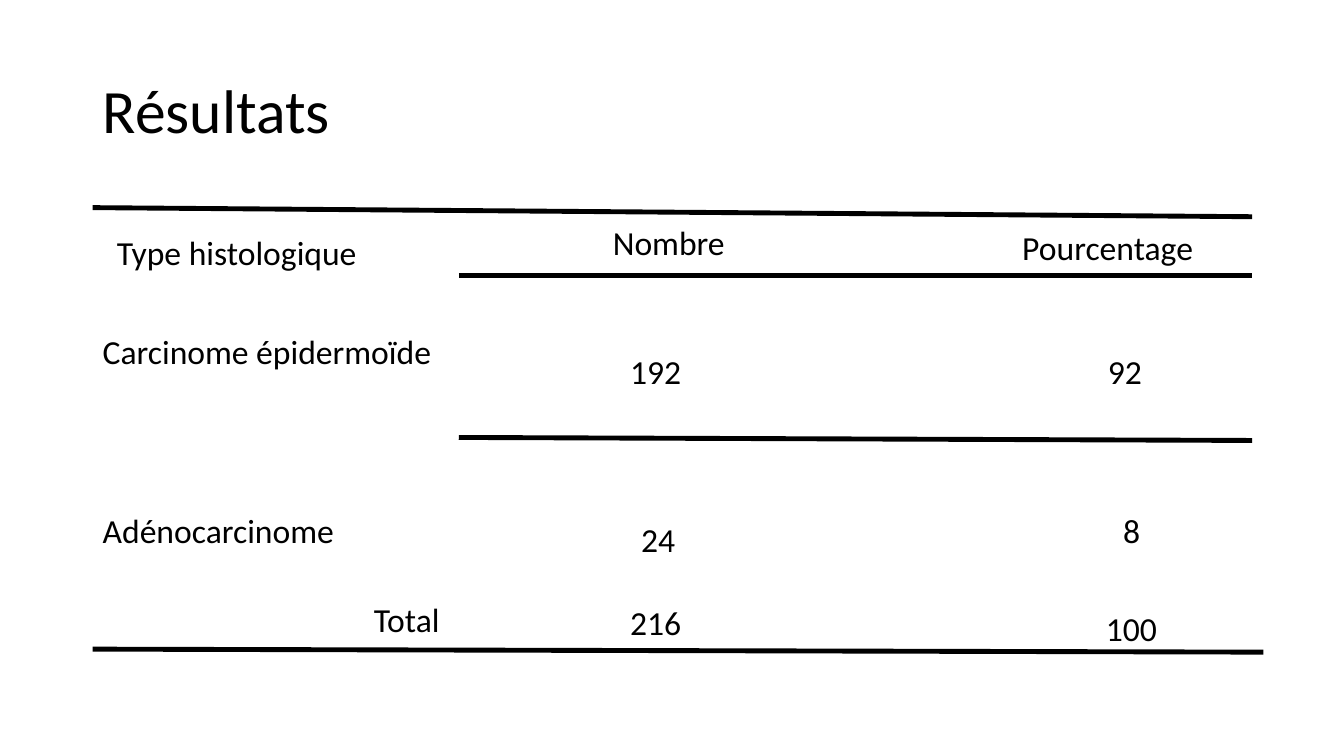
from pptx import Presentation
from pptx.dml.color import RGBColor
from pptx.enum.shapes import MSO_CONNECTOR
from pptx.enum.text import MSO_ANCHOR, MSO_AUTO_SIZE
from pptx.oxml.ns import qn
from pptx.util import Inches, Pt
from lxml.etree import SubElement

# Content
TITLE = "Résultats"
TITLE_BOX = (0.92, 0.4, 11.5, 1.45)
CELLS = [  # text, left, top, width
    ("Type histologique", 1.06, 2.25, 2.68),
    ("Nombre", 5.98, 2.15, 1.4),
    ("Pourcentage", 10.04, 2.2, 1.99),
    ("Carcinome épidermoïde", 0.92, 3.23, 3.57),
    ("192", 6.15, 3.43, 0.71),
    ("92", 10.89, 3.43, 0.54),
    ("Adénocarcinome", 0.92, 5.01, 2.52),
    ("24", 6.26, 5.1, 0.54),
    ("8", 11.04, 5.01, 0.37),
    ("Total", 3.61, 5.89, 0.94),
    ("216", 6.15, 5.92, 0.71),
    ("100", 10.87, 5.98, 0.71),
]
CELL_HEIGHT = 0.5
LEFT, VALUES_LEFT, RIGHT = 0.92, 4.55, 12.42
RULES = [  # x1, y1, x2, y2
    (LEFT, 2.06, RIGHT, 2.15),
    (VALUES_LEFT, 2.73, RIGHT, 2.73),
    (VALUES_LEFT, 4.34, RIGHT, 4.37),
    (LEFT, 6.44, 12.53, 6.47),
]


class Theme:
    font = "Calibri"
    ink = RGBColor(0, 0, 0)
    title = Pt(44)
    body = Pt(24)
    rule = Pt(3.5)


def add_text(slide, text, box, size):
    tf = slide.shapes.add_textbox(*map(Inches, box)).text_frame
    p = tf.paragraphs[0]
    p.text = text
    p.font.name = Theme.font
    p.font.size = size
    p.font.color.rgb = Theme.ink
    return tf


def add_rule(slide, ends):
    line = slide.shapes.add_connector(MSO_CONNECTOR.STRAIGHT, *map(Inches, ends))
    line.line.color.rgb = Theme.ink
    line.line.width = Theme.rule
    SubElement(line._element.spPr, qn("a:effectLst"))


def main():
    prs = Presentation()
    prs.slide_width, prs.slide_height = Inches(13.33), Inches(7.5)
    slide = prs.slides.add_slide(prs.slide_layouts[6])

    # Title
    tf = add_text(slide, TITLE, TITLE_BOX, Theme.title)
    tf.word_wrap = True
    tf.vertical_anchor = MSO_ANCHOR.MIDDLE
    tf.paragraphs[0].line_spacing = 0.9

    # Table rules
    for ends in RULES:
        add_rule(slide, ends)

    # Table entries
    for text, left, top, width in CELLS:
        tf = add_text(slide, text, (left, top, width, CELL_HEIGHT), Theme.body)
        tf.word_wrap = False
        tf.auto_size = MSO_AUTO_SIZE.SHAPE_TO_FIT_TEXT

    prs.save("out.pptx")


if __name__ == "__main__":
    main()
